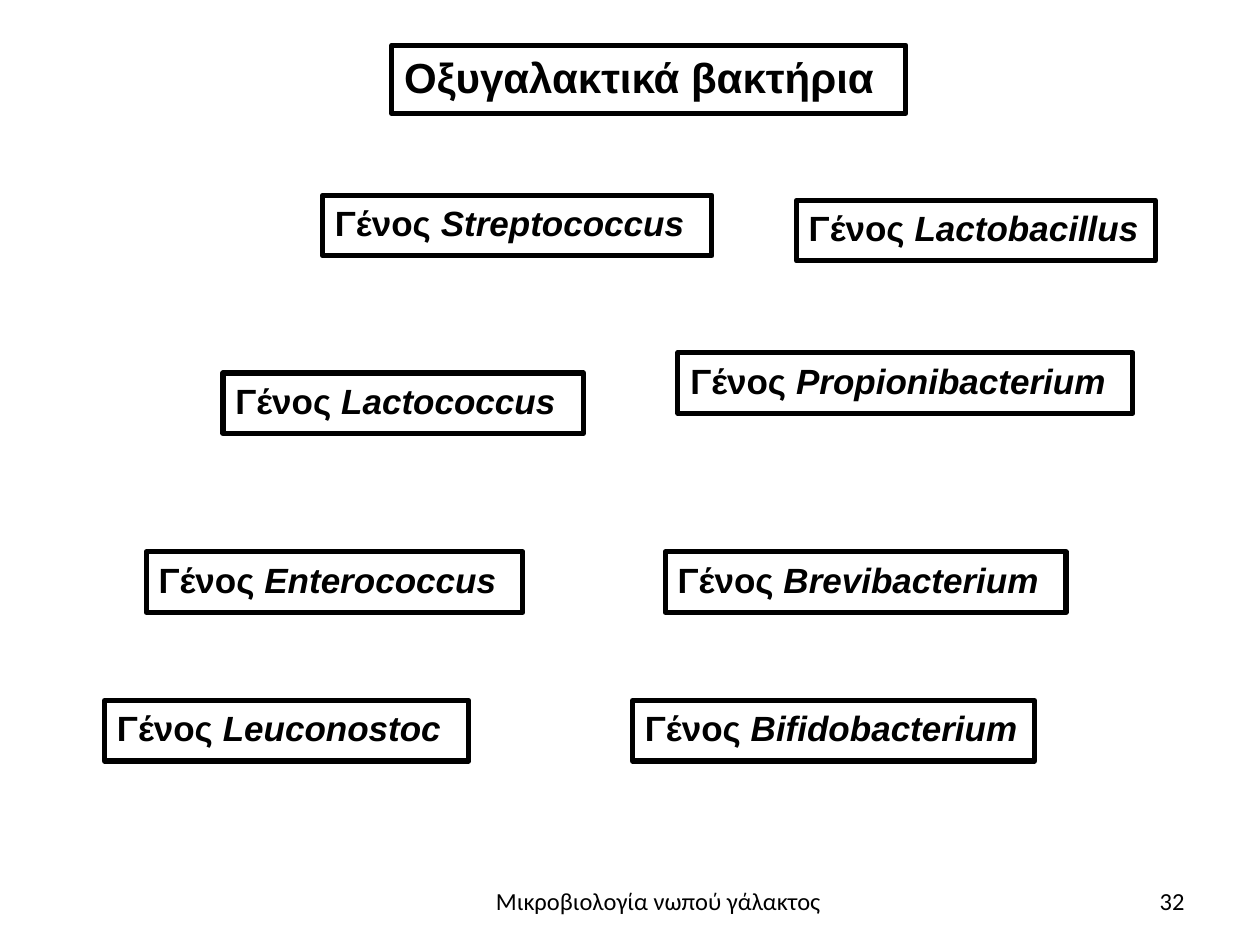
import pptx
import pptx.util
import pptx.dml.color
import pptx.enum.shapes
import pptx.enum.text
from pptx.util import Inches

ALIGN = pptx.enum.text.PP_ALIGN
ANCHOR = pptx.enum.text.MSO_ANCHOR
BLACK = "000000"
TITLE = ("Οξυγαλακτικά βακτήρια", 3.11, 0.36, 4.08, 0.54)
GENUS_LABEL = "Γένος "
GENUS_HEIGHT = 0.48
GENERA = [
    ("Streptococcus", 2.56, 1.55, 3.09),
    ("Lactococcus", 1.77, 2.96, 2.86),
    ("Enterococcus", 1.16, 4.38, 2.99),
    ("Leuconostoc", 0.83, 5.56, 2.89),
    ("Lactobacillus", 6.32, 1.59, 2.85),
    ("Propionibacterium", 5.38, 2.8, 3.61),
    ("Brevibacterium", 5.28, 4.38, 3.18),
    ("Bifidobacterium", 5.02, 5.56, 3.19),
]
FOOTERS = [
    ("32", (7.17, 6.95, 2.33, 0.4), ALIGN.RIGHT, ANCHOR.MIDDLE),
    ("Μικροβιολογία νωπού γάλακτος", (3.48, 6.98, 3.49, 0.55), ALIGN.CENTER, ANCHOR.TOP),
]


def color(value):
    return pptx.dml.color.RGBColor.from_string(value)


def write(shape, parts, size, font, bold=False, align=ALIGN.LEFT, anchor=ANCHOR.TOP):
    frame = shape.text_frame
    frame.word_wrap = True
    frame.vertical_anchor = anchor
    paragraph = frame.paragraphs[0]
    paragraph.alignment = align
    for text, italic in parts:
        run = paragraph.add_run()
        run.text = text
        run.font.name = font
        run.font.size = pptx.util.Pt(size)
        run.font.bold = bold
        run.font.italic = italic
        run.font.color.rgb = color(BLACK)


def add_framed(slide, parts, box, size):
    framed = slide.shapes.add_shape(
        pptx.enum.shapes.MSO_SHAPE.RECTANGLE, *map(Inches, box))
    framed.shadow.inherit = False
    framed.fill.background()
    framed.line.color.rgb = color(BLACK)
    framed.line.width = pptx.util.Pt(3)
    framed.text_frame.margin_right = 0
    write(framed, parts, size, "Arial", bold=True)


def main():
    deck = pptx.Presentation()
    deck.slide_width, deck.slide_height = Inches(10), Inches(7.5)
    slide = deck.slides.add_slide(deck.slide_layouts[6])
    for genus, left, top, width in GENERA:
        add_framed(slide, [(GENUS_LABEL, False), (genus, True)],
                   (left, top, width, GENUS_HEIGHT), 20)
    heading, *heading_box = TITLE
    add_framed(slide, [(heading, False)], heading_box, 24)
    for text, box, align, anchor in FOOTERS:
        footer = slide.shapes.add_textbox(*map(Inches, box))
        write(footer, [(text, False)], 14, "Calibri", align=align, anchor=anchor)
    deck.save("out.pptx")


if __name__ == "__main__":
    main()
